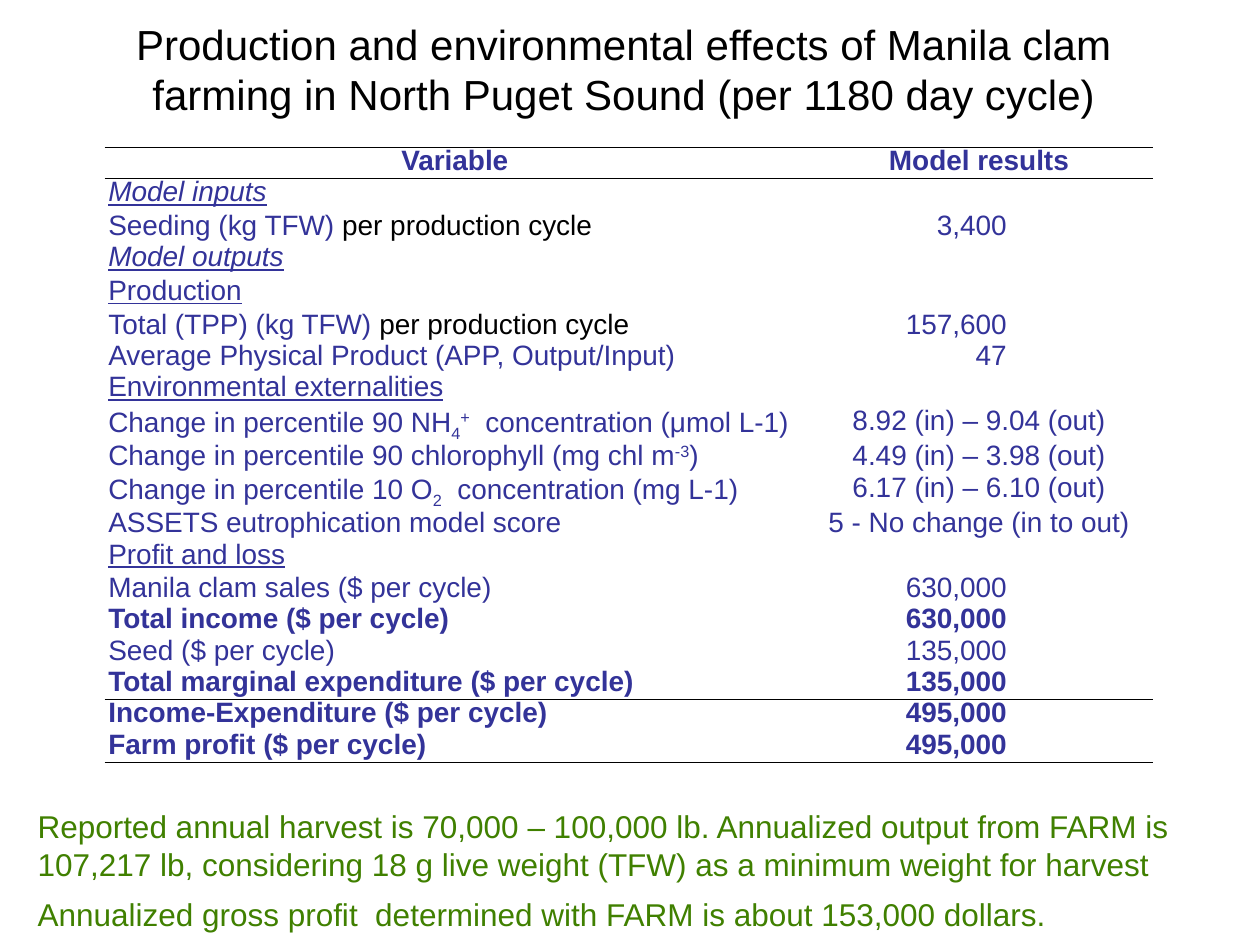
from lxml import etree
from pptx import Presentation
from pptx.dml.color import RGBColor
from pptx.enum.text import MSO_ANCHOR, PP_ALIGN
from pptx.oxml.ns import qn
from pptx.util import Inches, Pt

LEFT, CENTER, JUSTIFY = PP_ALIGN.LEFT, PP_ALIGN.CENTER, PP_ALIGN.JUSTIFY
TOP, MIDDLE = MSO_ANCHOR.TOP, MSO_ANCHOR.MIDDLE

BLACK = RGBColor(0x00, 0x00, 0x00)
NAVY = RGBColor(0x33, 0x33, 0x99)
GREEN = RGBColor(0x40, 0x80, 0x00)

SLIDE_W, SLIDE_H = Inches(10), Inches(7.5)
FONT = "Arial"
TABLE_SIZE = 16
TABLE_LEADING = 0.93
NO_STYLE_NO_GRID = "{2D5ABB26-0587-4C30-8999-92F81FD0307C}"
NUMBER_TAB = Inches(1.57)

BOLD = {"bold": True}
UNDERLINED = {"underline": True}
GROUP = {"italic": True, "underline": True}
PLAIN_BLACK = {"color": BLACK}
SUB, SUPER = {"baseline": -25}, {"baseline": 30}

PER_CYCLE = ("per production cycle", PLAIN_BLACK)

# Each row: runs of the variable, result, style of the result
ROWS = [
    ([("Variable", BOLD)], "Model results", BOLD),
    ([("Model inputs", GROUP)], "", {}),
    ([("Seeding (kg TFW) ", {}), PER_CYCLE], "3,400", {}),
    ([("Model outputs", GROUP)], "", {}),
    ([("Production", UNDERLINED)], "", {}),
    ([("Total (TPP) (kg TFW) ", {}), PER_CYCLE], "157,600", {}),
    ([("Average Physical Product (APP, Output/Input)", {})], "47", {}),
    ([("Environmental externalities", UNDERLINED)], "", {}),
    ([("Change in percentile 90 NH", {}), ("4", SUB), ("+", SUPER),
      ("  concentration (μmol L-1)", {})], "8.92 (in) – 9.04 (out)", {}),
    ([("Change in percentile 90 chlorophyll (mg chl m", {}), ("-3", SUPER),
      (")", {})], "4.49 (in) – 3.98 (out)", {}),
    ([("Change in percentile 10 O", {}), ("2", SUB),
      ("  concentration (mg L-1)", {})], "6.17 (in) – 6.10 (out)", {}),
    ([("ASSETS eutrophication model score", {})], "5 - No change (in to out)", {}),
    ([("Profit and loss", UNDERLINED)], "", {}),
    ([("Manila clam sales ($ per cycle)", {})], "630,000", {}),
    ([("Total income ($ per cycle)", BOLD)], "630,000", BOLD),
    ([("Seed ($ per cycle)", {})], "135,000", {}),
    ([("Total marginal expenditure ($ per cycle)", BOLD)], "135,000", BOLD),
    ([("Income-Expenditure ($ per cycle)", BOLD)], "495,000", BOLD),
    ([("Farm profit ($ per cycle)", BOLD)], "495,000", BOLD),
]
LAST = len(ROWS) - 1
RULES = {0: ("lnT", "lnB"), 1: ("lnT",), LAST - 2: ("lnB",),
         LAST - 1: ("lnT",), LAST: ("lnB",)}


def add_run(paragraph, text, size, color, bold=False, italic=False,
            underline=False, baseline=0):
    run = paragraph.add_run()
    run.text = text
    font = run.font
    font.name, font.size = FONT, Pt(size)
    font.bold, font.italic, font.underline = bold, italic, underline
    font.color.rgb = color
    if baseline:
        font._element.set("baseline", str(baseline * 1000))


def add_text(slide, box, text, size, color, leading, align=LEFT, anchor=TOP):
    """Place a wrapped text; box is left, top, width, height as slide shares."""
    left, top, width, height = box
    frame = slide.shapes.add_textbox(
        round(left * SLIDE_W), round(top * SLIDE_H),
        round(width * SLIDE_W), round(height * SLIDE_H)).text_frame
    frame.word_wrap = True
    frame.vertical_anchor = anchor
    paragraph = frame.paragraphs[0]
    paragraph.alignment = align
    paragraph.line_spacing = Pt(leading)
    add_run(paragraph, text, size, color)


def add_decimal_tab(paragraph):
    tabs = etree.SubElement(paragraph._p.get_or_add_pPr(), qn("a:tabLst"))
    etree.SubElement(tabs, qn("a:tab"), pos=str(NUMBER_TAB), algn="dec")


def add_rules(cell, ruled_sides):
    """Rule the given sides and clear the other horizontal ones."""
    properties = cell._tc.get_or_add_tcPr()
    for side in ("lnT", "lnB"):
        line = etree.SubElement(properties, qn(f"a:{side}"), w=str(Pt(1)))
        if side in ruled_sides:
            fill = etree.SubElement(line, qn("a:solidFill"))
            etree.SubElement(fill, qn("a:srgbClr"), val=str(BLACK))
        else:
            etree.SubElement(line, qn("a:noFill"))


def fill_cell(cell, runs, align, ruled_sides):
    cell.margin_left = cell.margin_right = Inches(0.03)
    cell.margin_top = cell.margin_bottom = 0
    add_rules(cell, ruled_sides)
    cell.fill.background()
    paragraph = cell.text_frame.paragraphs[0]
    paragraph.alignment = align
    paragraph.line_spacing = TABLE_LEADING
    for text, style in runs:
        add_run(paragraph, text, TABLE_SIZE, **{"color": NAVY, **style})
    if not runs:
        etree.SubElement(paragraph._p, qn("a:endParaRPr"), sz=str(TABLE_SIZE * 100))


def add_results_table(slide):
    row_height = Inches(0.1)  # rows grow to fit their text
    table = slide.shapes.add_table(
        len(ROWS), 2, Inches(0.83), Inches(1.17), Inches(8.32),
        row_height * len(ROWS)).table
    table.first_row = table.horz_banding = False
    table._tbl.tblPr.find(qn("a:tableStyleId")).text = NO_STYLE_NO_GRID
    table.columns[0].width, table.columns[1].width = Inches(5.56), Inches(2.76)
    for index, (variable, result, style) in enumerate(ROWS):
        ruled_sides = RULES.get(index, ())
        fill_cell(table.cell(index, 0), variable,
                  JUSTIFY if index else CENTER, ruled_sides)
        is_number = result.replace(",", "").isdigit()
        text = "\t" + result if is_number else result
        cell = table.cell(index, 1)
        fill_cell(cell, [(text, style)] if text else [],
                  JUSTIFY if is_number else CENTER, ruled_sides)
        if is_number:
            add_decimal_tab(cell.text_frame.paragraphs[0])


def main():
    deck = Presentation()
    deck.slide_width, deck.slide_height = SLIDE_W, SLIDE_H
    slide = deck.slides.add_slide(deck.slide_layouts[6])
    add_text(slide, (0.07, 0.01, 0.85, 0.125),
             "Production and environmental effects of Manila clam farming "
             "in North Puget Sound (per 1180 day cycle)",
             24, BLACK, 28.5, CENTER, MIDDLE)
    add_results_table(slide)
    add_text(slide, (0.02, 0.94, 0.9, 0.053),
             "Annualized gross profit  determined with FARM is about 153,000 dollars.",
             18, GREEN, 21.7)
    add_text(slide, (0.02, 0.847, 0.96, 0.095),
             "Reported annual harvest is 70,000 – 100,000 lb. Annualized output "
             "from FARM is 107,217 lb, considering 18 g live weight (TFW) as a "
             "minimum weight for harvest", 18, GREEN, 21.7)
    deck.save("out.pptx")


if __name__ == "__main__":
    main()
